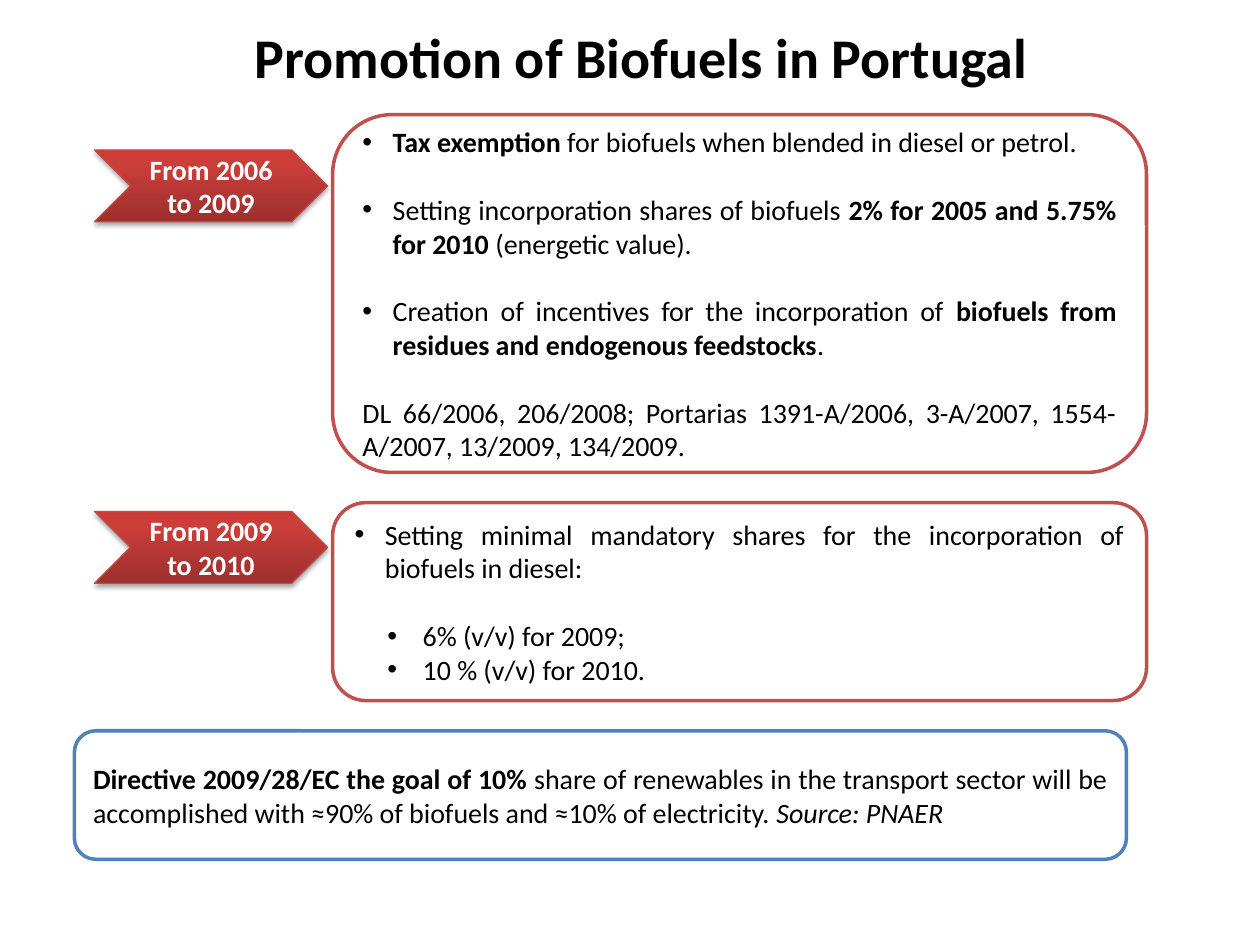
from copy import deepcopy
from typing import NamedTuple

from lxml import etree
from pptx import Presentation
from pptx.dml.color import RGBColor
from pptx.enum.shapes import MSO_SHAPE
from pptx.enum.text import MSO_ANCHOR, PP_ALIGN
from pptx.oxml.ns import qn
from pptx.shapes.autoshape import Shape
from pptx.slide import Slide
from pptx.text.text import TextFrame
from pptx.util import Inches, Pt

ROUNDED, CHEVRON = MSO_SHAPE.ROUNDED_RECTANGLE, MSO_SHAPE.CHEVRON
MIDDLE, BOTTOM = MSO_ANCHOR.MIDDLE, MSO_ANCHOR.BOTTOM
CENTER, JUSTIFY = PP_ALIGN.CENTER, PP_ALIGN.JUSTIFY

BLACK = RGBColor(0x00, 0x00, 0x00)
WHITE = RGBColor(0xFF, 0xFF, 0xFF)
RED = RGBColor(0xC0, 0x50, 0x4D)
BLUE = RGBColor(0x4F, 0x81, 0xBD)
CHEVRON_EDGE = RGBColor(0xBF, 0x4C, 0x48)
CHEVRON_STOPS = (
    (0, RGBColor(0x9C, 0x2F, 0x2D)),
    (0.8, RGBColor(0xCB, 0x3E, 0x3A)),
    (1, RGBColor(0xCE, 0x3B, 0x37)),
)
FONT = "Calibri"
BODY_SIZE = 16
GAP = 19.5
PERIOD_LEFT, PERIOD_WIDTH, PERIOD_HEIGHT = 0.75, 1.85, 0.57
MEASURES_LEFT, MEASURES_WIDTH = 2.64, 6.46


class Span(NamedTuple):
    text: str
    bold: bool = False
    italic: bool = False


class Para(NamedTuple):
    spans: tuple[Span, ...]
    margin: float = 0
    hanging: float = 0
    before: float = 0
    level: int = 0


class Panel(NamedTuple):
    left: float
    top: float
    width: float
    height: float
    edge: RGBColor
    paras: tuple[Para, ...]


class Period(NamedTuple):
    label: str
    top: float


def bullet(*spans: Span, before: float = 0) -> Para:
    return Para(spans, 0.24, 0.24, before)


def sub_bullet(text: str, before: float = 0) -> Para:
    return Para((Span(text),), 0.54, 0.28, before, 1)


PERIODS = (Period("From 2006 to 2009", 1.19), Period("From 2009 to 2010", 4.06))
PANELS = (
    Panel(MEASURES_LEFT, 0.91, MEASURES_WIDTH, 2.84, RED, (
        bullet(Span("Tax exemption", bold=True),
               Span(" for biofuels when blended in diesel or petrol.")),
        bullet(Span("Setting incorporation shares of biofuels "),
               Span("2% for 2005 and 5.75% for 2010", bold=True),
               Span(" (energetic value)."), before=GAP),
        bullet(Span("Creation of incentives for the incorporation of "),
               Span("biofuels from residues and endogenous feedstocks", bold=True),
               Span("."), before=GAP),
        Para((Span("DL 66/2006, 206/2008; Portarias 1391-A/2006, 3-A/2007, "
                   "1554-A/2007, 13/2009, 134/2009."),), before=GAP),
    )),
    Panel(MEASURES_LEFT, 3.99, MEASURES_WIDTH, 1.57, RED, (
        bullet(Span("Setting minimal mandatory shares for the incorporation of "
                    "biofuels in diesel:")),
        sub_bullet("6% (v/v) for 2009;", GAP),
        sub_bullet("10 % (v/v) for 2010."),
    )),
    Panel(0.59, 5.8, 8.35, 1.02, BLUE, (
        Para((Span("Directive 2009/28/EC the goal of 10%", bold=True),
              Span(" share of renewables in the transport sector will be accomplished "
                   "with ≈90% of biofuels and ≈10% of electricity. "),
              Span("Source: PNAER", italic=True))),
    )),
)


def write(frame: TextFrame, paras: tuple[Para, ...], align: PP_ALIGN,
          anchor: MSO_ANCHOR, size: float, color: RGBColor) -> None:
    frame.word_wrap = True
    frame.vertical_anchor = anchor
    for index, para in enumerate(paras):
        paragraph = frame.add_paragraph() if index else frame.paragraphs[0]
        paragraph.alignment = align
        paragraph.level = para.level
        if para.before:
            paragraph.space_before = Pt(para.before)
        if para.hanging:
            properties = paragraph._p.get_or_add_pPr()
            properties.set("marL", str(Inches(para.margin)))
            properties.set("indent", str(-Inches(para.hanging)))
            etree.SubElement(properties, qn("a:buFont"), typeface="Arial")
            etree.SubElement(properties, qn("a:buChar"), char="•")
        for span in para.spans:
            run = paragraph.add_run()
            run.text = span.text
            run.font.name = FONT
            run.font.size = Pt(size)
            run.font.bold = span.bold
            run.font.italic = span.italic
            run.font.color.rgb = color


def add_title(slide: Slide, text: str) -> None:
    title = slide.shapes.add_textbox(Inches(0.5), Inches(-0.03), Inches(9.18), Inches(0.79))
    write(title.text_frame, (Para((Span(text, bold=True),)),), CENTER, BOTTOM, 32, BLACK)


def add_panel(slide: Slide, panel: Panel) -> None:
    box = slide.shapes.add_shape(ROUNDED, Inches(panel.left), Inches(panel.top),
                                 Inches(panel.width), Inches(panel.height))
    box.shadow.inherit = False
    box.fill.solid()
    box.fill.fore_color.rgb = WHITE
    box.line.color.rgb = panel.edge
    box.line.width = Pt(2)
    write(box.text_frame, panel.paras, JUSTIFY, MIDDLE, BODY_SIZE, BLACK)


def shade(arrow: Shape) -> None:
    arrow.fill.gradient()
    arrow.fill.gradient_angle = 90
    stop_list = arrow._element.spPr.find(f".//{qn('a:gsLst')}")
    stop_list.append(deepcopy(stop_list[-1]))
    for stop, (position, color) in zip(arrow.fill.gradient_stops, CHEVRON_STOPS):
        stop.position = position
        stop.color.rgb = color


def cast_shadow(arrow: Shape) -> None:
    arrow.shadow.inherit = False
    effects = arrow._element.spPr.find(qn("a:effectLst"))
    shadow = etree.SubElement(effects, qn("a:outerShdw"), blurRad=str(Pt(3.1)),
                              dist=str(Pt(1.8)), dir="5400000", rotWithShape="0")
    tint = etree.SubElement(shadow, qn("a:srgbClr"), val=str(BLACK))
    etree.SubElement(tint, qn("a:alpha"), val="35000")


def add_period(slide: Slide, period: Period) -> None:
    arrow = slide.shapes.add_shape(CHEVRON, Inches(PERIOD_LEFT), Inches(period.top),
                                   Inches(PERIOD_WIDTH), Inches(PERIOD_HEIGHT))
    shade(arrow)
    arrow.line.color.rgb = CHEVRON_EDGE
    arrow.line.width = Pt(0.75)
    cast_shadow(arrow)
    label = Para((Span(period.label, bold=True),))
    write(arrow.text_frame, (label,), CENTER, MIDDLE, BODY_SIZE, WHITE)


def main() -> None:
    deck = Presentation()
    deck.slide_width, deck.slide_height = Inches(10), Inches(7.5)
    slide = deck.slides.add_slide(deck.slide_layouts[6])
    add_title(slide, "Promotion of Biofuels in Portugal")
    for panel in PANELS:
        add_panel(slide, panel)
    for period in PERIODS:
        add_period(slide, period)
    deck.save("out.pptx")


if __name__ == "__main__":
    main()
